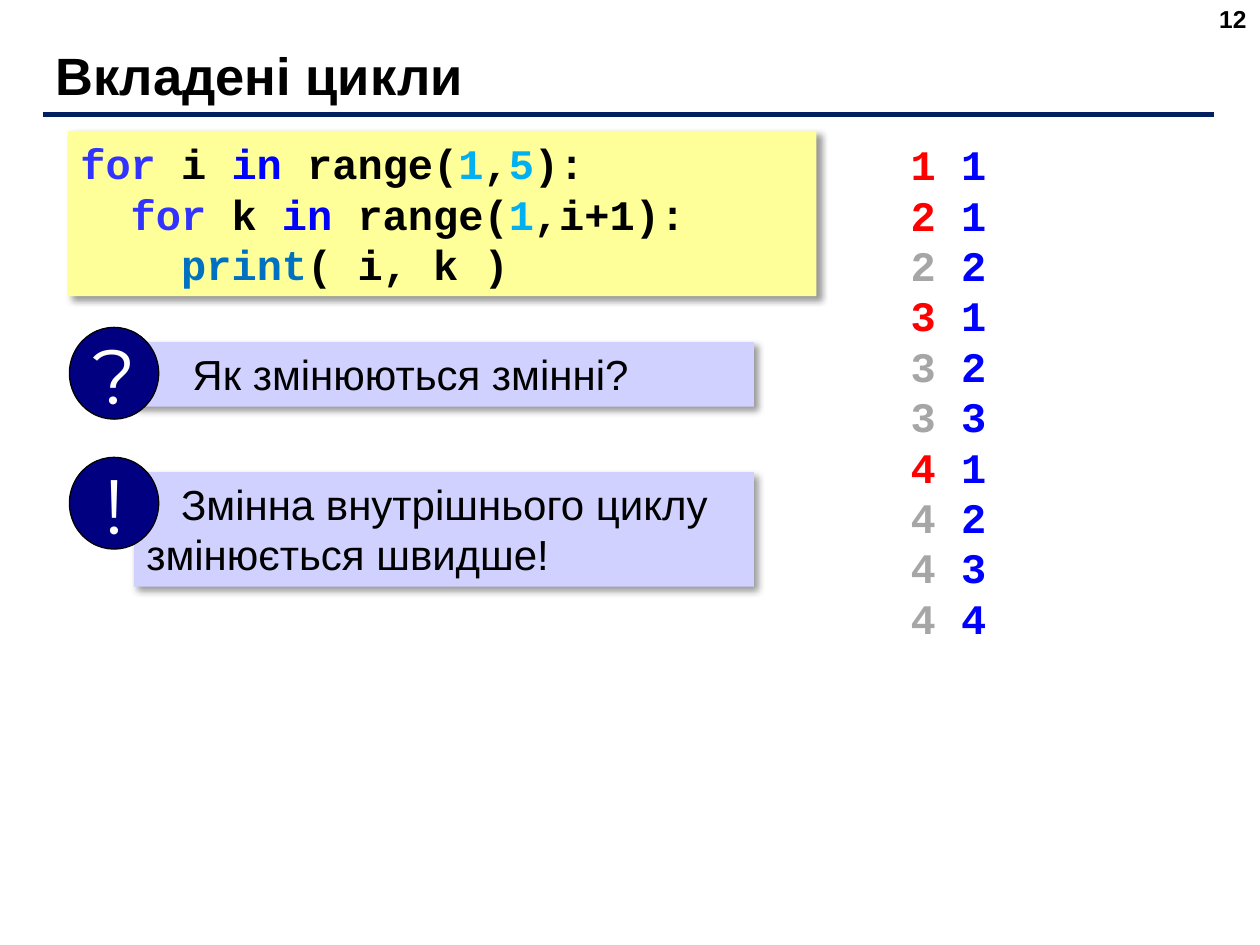
from lxml import etree
from pptx import Presentation
from pptx.dml.color import RGBColor
from pptx.enum import shapes, text
from pptx.oxml.ns import qn
from pptx.util import Cm, Pt

BLACK, WHITE, NAVY = "000000", "FFFFFF", "000080"
YELLOW, LILAC = "FFFF99", "D1D1FF"
VIOLET, BLUE, SKY, TEAL = "3333FF", "0000FF", "00B0F0", "0070C0"
RED, GREY = "FF0000", "A6A6A6"

CODE = [
    [("for ", VIOLET), ("i ", BLACK), ("in", BLUE), (" range(", BLACK),
     ("1", SKY), (",", BLACK), ("5", SKY), ("):", BLACK)],
    [("  for", VIOLET), (" k ", BLACK), ("in", BLUE), (" range(", BLACK),
     ("1", SKY), (",i+1):", BLACK)],
    [("    print", TEAL), ("( i, k )", BLACK)],
]


def rgb(value):
    return RGBColor.from_string(value)


def cm_box(*lengths):
    return [Cm(length) for length in lengths]


def set_font(paragraph, name, size, bold=False, color=BLACK):
    font = paragraph.font
    font.name, font.size, font.bold = name, Pt(size), bold
    font.color.rgb = rgb(color)


def write_lines(frame, lines):
    """Write one monospaced paragraph per list of (words, colour) pairs."""
    for number, line in enumerate(lines):
        paragraph = frame.add_paragraph() if number else frame.paragraphs[0]
        paragraph.alignment = text.PP_ALIGN.LEFT
        set_font(paragraph, "Courier New", 24, bold=True)
        for words, color in line:
            run = paragraph.add_run()
            run.text = words
            run.font.color.rgb = rgb(color)


def add_panel(parent, box, fill):
    """Add a borderless rectangle with a soft shadow to the lower right."""
    panel = parent.add_shape(shapes.MSO_SHAPE.RECTANGLE, *cm_box(*box))
    panel.fill.solid()
    panel.fill.fore_color.rgb = rgb(fill)
    panel.line.fill.background()
    panel.shadow.inherit = False
    effects = panel._element.spPr.find(qn("a:effectLst"))
    shadow = etree.SubElement(
        effects, qn("a:outerShdw"), blurRad=str(Pt(4)), dist=str(Pt(3)),
        dir=str(45 * 60000), algn="tl", rotWithShape="0")
    color = etree.SubElement(shadow, qn("a:srgbClr"), val=BLACK)
    etree.SubElement(color, qn("a:alpha"), val="40000")
    panel.text_frame.word_wrap = True
    return panel


def add_heading(slide, words, left, top, width, height):
    title = slide.shapes.title
    title.left, title.top, title.width, title.height = cm_box(left, top, width, height)
    title.text_frame.text = words
    title.text_frame.vertical_anchor = text.MSO_ANCHOR.MIDDLE
    paragraph = title.text_frame.paragraphs[0]
    paragraph.alignment = text.PP_ALIGN.LEFT
    set_font(paragraph, "Arial", 30, bold=True)

    y = top + height + 0.15
    rule = slide.shapes.add_connector(
        shapes.MSO_CONNECTOR.STRAIGHT, *cm_box(left, y, left + 23.62, y))
    rule.line.color.rgb = rgb("002060")
    rule.line.width = Pt(3)
    etree.SubElement(rule._element.spPr, qn("a:effectLst"))


def add_page_number(slide, number, *box):
    frame = slide.shapes.add_textbox(*cm_box(*box)).text_frame
    frame.text = str(number)
    frame.paragraphs[0].alignment = text.PP_ALIGN.RIGHT
    set_font(frame.paragraphs[0], "Arial", 14, bold=True)


def add_code(slide, *box):
    frame = add_panel(slide.shapes, box, YELLOW).text_frame
    frame.vertical_anchor = text.MSO_ANCHOR.MIDDLE
    write_lines(frame, CODE)


def add_output(slide, *box):
    """List the loop output; the outer variable is red where it changes."""
    frame = slide.shapes.add_textbox(*cm_box(*box)).text_frame
    frame.word_wrap = False
    write_lines(frame, [
        [(f"{i} ", RED if k == 1 else GREY), (str(k), BLUE)]
        for i in range(1, 5) for k in range(1, i + 1)])


def add_callout(slide, sign, words, indent, left, top, width, height):
    """Add a panel with a round sign over its upper left corner."""
    group = slide.shapes.add_group_shape().shapes
    panel = add_panel(group, (left + 1.3, top + 0.3, width - 1.3, height - 0.3), LILAC)
    panel.text_frame.vertical_anchor = text.MSO_ANCHOR.TOP
    panel.text_frame.text = words
    paragraph = panel.text_frame.paragraphs[0]
    paragraph.alignment = text.PP_ALIGN.LEFT
    paragraph._p.get_or_add_pPr().set("indent", str(Cm(indent)))
    set_font(paragraph, "Arial", 24)

    badge = group.add_shape(shapes.MSO_SHAPE.OVAL, *cm_box(left, top, 1.8, 1.85))
    badge.fill.solid()
    badge.fill.fore_color.rgb = rgb(NAVY)
    badge.line.color.rgb = rgb(BLACK)
    badge.line.width = Pt(0.75)
    badge.shadow.inherit = False
    frame = badge.text_frame
    frame.word_wrap = False
    frame.vertical_anchor = text.MSO_ANCHOR.MIDDLE
    frame.text = sign
    frame.paragraphs[0].alignment = text.PP_ALIGN.CENTER
    set_font(frame.paragraphs[0], "Montserrat", 44, color=WHITE)


def main():
    deck = Presentation()
    deck.slide_width, deck.slide_height = Cm(25.4), Cm(19.05)
    slide = deck.slides.add_slide(deck.slide_layouts[5])
    add_heading(slide, "Вкладені цикли", 0.86, 0.84, 23.27, 1.32)
    add_page_number(slide, 12, 19.46, -0.05, 5.92, 1.32)
    add_code(slide, 1.37, 2.64, 15.09, 3.33)
    add_callout(slide, "?", "Як змінюються змінні?", 0.93, 1.4, 6.6, 13.8, 1.6)
    add_output(slide, 18.11, 2.67, 2.57, 10.52)
    add_callout(slide, "!", "Змінна внутрішнього циклу змінюється швидше!",
                0.7, 1.4, 9.22, 13.8, 2.61)
    deck.save("out.pptx")


if __name__ == "__main__":
    main()
